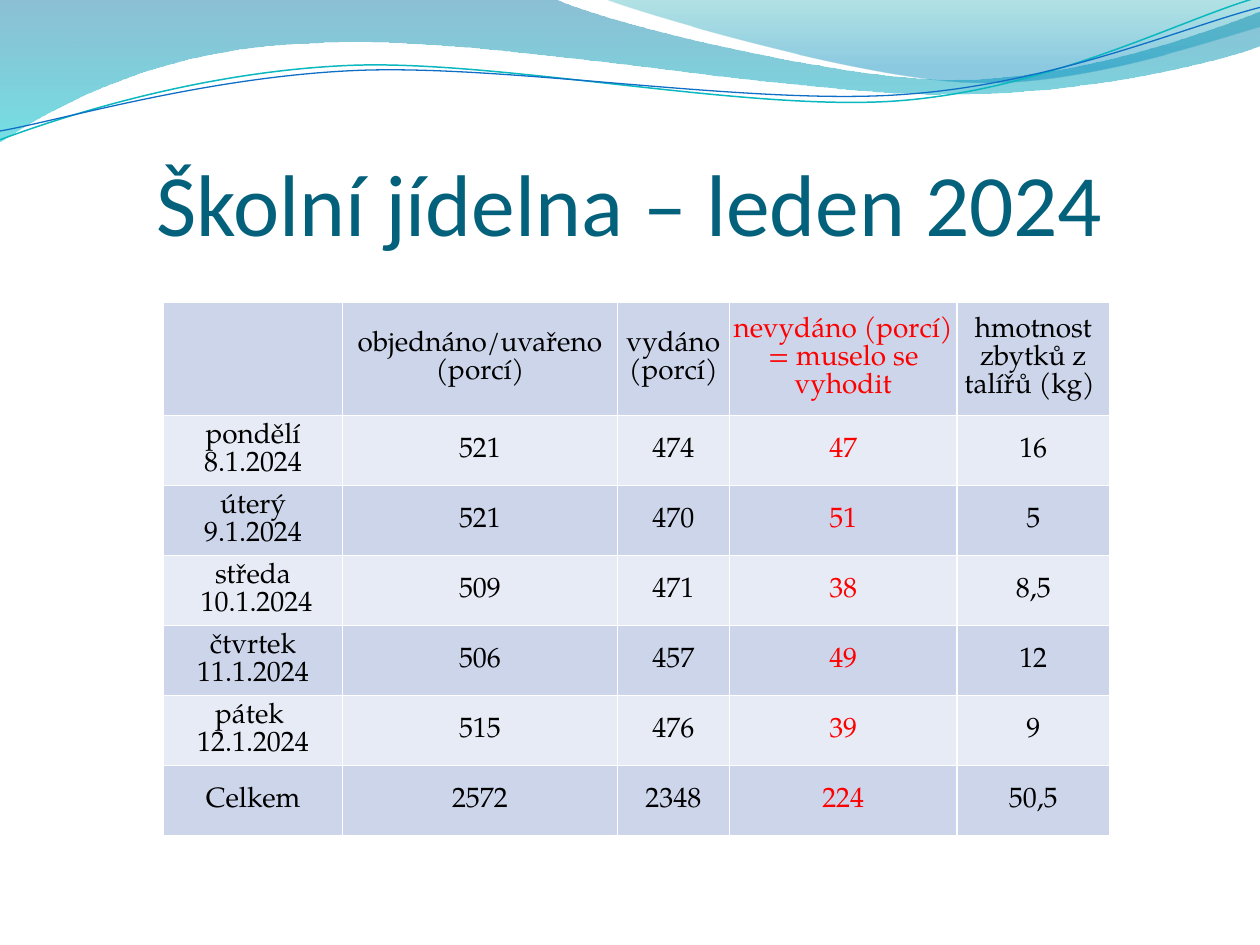
from math import cos, radians, sin

from pptx import Presentation
from pptx.dml.color import RGBColor
from pptx.enum.text import MSO_ANCHOR, PP_ALIGN
from pptx.oxml.ns import qn
from pptx.util import Pt
from lxml.etree import SubElement

COLORS = {
    "title": "04617B", "text": "000000", "waste": "FF0000", "border": "FFFFFF",
    "band_dark": "CCD5EA", "band_light": "E7EBF5",
    "wave_blue": "0074A1", "wave_aqua": "00C6CF",
    "crest_teal": "00A1A9", "crest_blue": "008BBF",
    "line_teal": "0AB8BF", "line_blue": "0F6FC6",
}
BODY_FONT = "TeX Gyre Pagella"
LINE_TILT = -2.7

# Wave outlines in points: a start, then lines (one point) or Bézier curves (three)
WAVE = [
    [(0, 0)], [(316.8, -0.7)],
    [(342.7, 12.2), (478, 45.4), (545.8, 45.4)],
    [(614.2, 45.4), (689.8, 18.7), (720, 6.5)],
    [(720.7, 25.9)],
    [(707.8, 31.7), (626.4, 54.7), (537.1, 54)],
    [(447.8, 54), (275, 20.2), (185, 24.5)],
    [(92.9, 25.9), (33.1, 59.8), (-0.7, 81.4)],
    [(0, 0)],
]
CREST = [
    [(344.9, -0.7)],
    [(366.5, 7.9), (491, 44.6), (553.7, 46.8)],
    [(616.3, 49.7), (691.9, 23), (720, 15.1)],
    [(720, 0)],
    [(344.9, -0.7)],
]
TEAL_LINE = [
    [(0, 79.9)],
    [(34.6, 67), (113.8, 41), (199.4, 37.4)],
    [(284.4, 33.8), (427, 64.1), (513.4, 57.6)],
    [(599.8, 51.1), (675.4, 10.8), (718.6, -1.4)],
]
BLUE_LINE = [
    [(0, 74.9)],
    [(33.8, 69.1), (118.1, 43.9), (203.8, 40.3)],
    [(290.2, 36.7), (429.8, 60.5), (516.2, 54)],
    [(601.9, 48.2), (677.5, 15.1), (720, 4.3)],
]

COL_WIDTHS = [102.4, 157, 64, 130.2, 87]
HEADER_HEIGHT, ROW_HEIGHT = 64.5, 40.05
WASTE_COL = 3
TUESDAY = "úterý 9.1.2024"
ROWS = [
    ["", "objednáno/uvařeno (porcí)", "vydáno (porcí)",
     "nevydáno (porcí) = muselo se vyhodit", "hmotnost zbytků z talířů (kg) "],
    ["pondělí 8.1.2024", "521", "474", "47", "16"],
    [TUESDAY, "521", "470", "51", "5"],
    ["středa\n 10.1.2024", "509", "471", "38", "8,5"],
    ["čtvrtek\n11.1.2024", "506", "457", "49", "12"],
    ["pátek \n12.1.2024", "515", "476", "39", "9"],
    ["Celkem", "2572", "2348", "224", "50,5"],
]


def rgb(name):
    return RGBColor.from_string(COLORS[name])


def add_text(tf, text, size, font, color, spacing=None):
    """Write centred text, one paragraph for each line."""
    for i, line in enumerate(text.split("\n")):
        p = tf.paragraphs[0] if i == 0 else tf.add_paragraph()
        p.alignment = PP_ALIGN.CENTER
        if spacing:
            p.line_spacing = Pt(spacing)
        r = p.add_run()
        r.text = line
        r.font.size, r.font.name = Pt(size), font
        r.font.color.rgb = rgb(color)


def turn(segments, angle):
    """Rotate an outline clockwise about the middle of its ends."""
    (x0, y0), (x1, y1) = segments[0][0], segments[-1][-1]
    cx, cy = (x0 + x1) / 2, (y0 + y1) / 2
    c, n = cos(radians(angle)), sin(radians(angle))
    return [[(cx + (x - cx) * c - (y - cy) * n, cy + (x - cx) * n + (y - cy) * c)
             for x, y in seg] for seg in segments]


def add_outline(s, left, top, segments, close=False, rotation=0):
    """Draw a freeform through the end points, then bend its curved segments."""
    segments = [[(Pt(left + x), Pt(top + y)) for x, y in seg]
                for seg in turn(segments, -rotation)]
    builder = s.shapes.build_freeform(*segments[0][0])
    builder.add_line_segments([seg[-1] for seg in segments[1:]], close=close)
    sp = builder.convert_to_shape()
    sp.shadow.inherit = False
    lines = list(sp._element.spPr.iter(qn("a:lnTo")))
    for line, seg in zip(lines, segments[1:]):
        if len(seg) == 3:
            curve = line.makeelement(qn("a:cubicBezTo"), {})
            for x, y in seg:
                SubElement(curve, qn("a:pt"), x=str(x - sp.left), y=str(y - sp.top))
            line.getparent().replace(line, curve)
    sp.rotation = rotation
    return sp


def add_waves(s, left, top):
    # Translucent bands: position, colour and opacity of each stop
    for segments, stops in (
        (WAVE, [(0, "wave_blue", 45), (1, "wave_aqua", 55)]),
        (CREST, [(0, "crest_teal", 30), (0.8, "crest_blue", 45)]),
    ):
        sp = add_outline(s, left, top, segments, close=True)
        sp.line.fill.background()
        sp.fill.gradient()
        sp.fill.gradient_angle = 270
        for stop, (position, color, _) in zip(sp.fill.gradient_stops, stops):
            stop.position = position
            stop.color.rgb = rgb(color)
        for clr, (_, _, opacity) in zip(sp._element.spPr.iter(qn("a:srgbClr")), stops):
            SubElement(clr, qn("a:alpha"), val=str(opacity * 1000))
    # Thin lines
    for segments, color, width in ((TEAL_LINE, "line_teal", 0.85),
                                   (BLUE_LINE, "line_blue", 0.75)):
        sp = add_outline(s, left, top, segments, rotation=LINE_TILT)
        sp.fill.background()
        sp.line.color.rgb = rgb(color)
        sp.line.width = Pt(width)


def add_title(s, left, top, width, height):
    tf = s.shapes.add_textbox(Pt(left), Pt(top), Pt(width), Pt(height)).text_frame
    tf.word_wrap = True
    tf.vertical_anchor = MSO_ANCHOR.BOTTOM
    tf.margin_left = tf.margin_right = tf.margin_bottom = 0
    tf.margin_top = Pt(3.6)
    add_text(tf, "Školní jídelna – leden 2024", size=50, font="Calibri", color="title")


def set_borders(cell):
    tcPr = cell._tc.get_or_add_tcPr()
    for i, side in enumerate(("lnL", "lnR", "lnT", "lnB")):
        ln = tcPr.makeelement(qn("a:" + side), {"w": str(Pt(1))})
        fill = SubElement(ln, qn("a:solidFill"))
        SubElement(fill, qn("a:srgbClr"), val=COLORS["border"])
        tcPr.insert(i, ln)


def add_meals_table(s, left, top):
    height = HEADER_HEIGHT + ROW_HEIGHT * (len(ROWS) - 1)
    table = s.shapes.add_table(len(ROWS), len(COL_WIDTHS), Pt(left), Pt(top),
                               Pt(sum(COL_WIDTHS)), Pt(height)).table
    table.first_row = table.horz_banding = False
    for col, width in zip(table.columns, COL_WIDTHS):
        col.width = Pt(width)
    for i, values in enumerate(ROWS):
        table.rows[i].height = Pt(ROW_HEIGHT if i else HEADER_HEIGHT)
        for j, value in enumerate(values):
            cell = table.cell(i, j)
            cell.fill.solid()
            cell.fill.fore_color.rgb = rgb("band_light" if i % 2 else "band_dark")
            cell.vertical_anchor = MSO_ANCHOR.MIDDLE
            cell.margin_left = cell.margin_right = cell.margin_top = Pt(0.7)
            cell.margin_bottom = 0
            set_borders(cell)
            if value:
                add_text(cell.text_frame, value, size=16, font=BODY_FONT, spacing=16,
                         color="waste" if j == WASTE_COL else "text")
            if value == TUESDAY:
                # Narrow the cell so the date wraps, and move the day to the left
                cell.margin_left = cell.margin_right = Pt(14)
                pPr = cell.text_frame.paragraphs[0]._p.get_or_add_pPr()
                pPr.set("indent", str(-Pt(16)))


def main():
    prs = Presentation()
    prs.slide_width, prs.slide_height = Pt(720), Pt(540)
    s = prs.slides.add_slide(prs.slide_layouts[6])
    add_waves(s, 0, 0)
    add_title(s, 36, 55.4, 648, 90)
    add_meals_table(s, 93.4, 172.8)
    prs.save("out.pptx")


if __name__ == "__main__":
    main()
